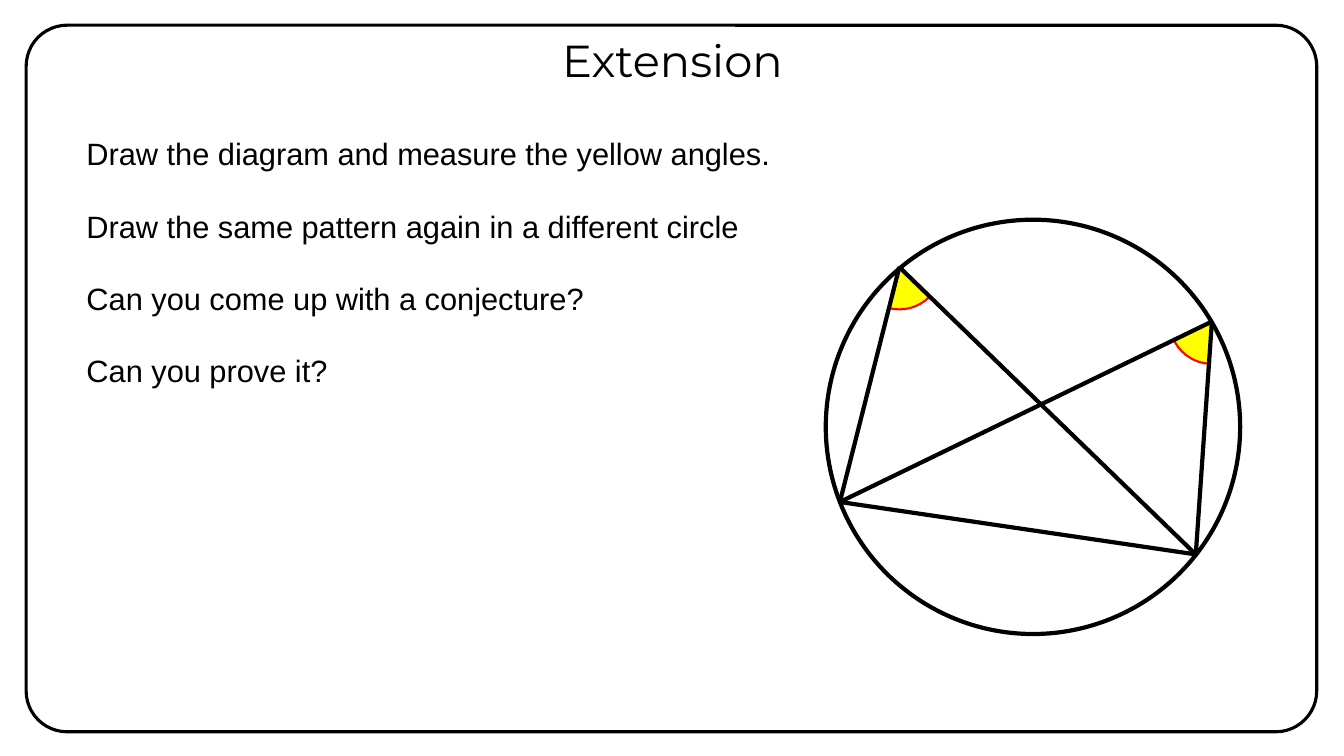
import math

import pptx
import pptx.dml.color
import pptx.enum.shapes
import pptx.enum.text
import pptx.oxml.ns
import pptx.util
from pptx.util import Inches

COLOURS = {"ink": "000000", "paper": "FFFFFF", "angle": "FFFF00", "arc": "FF0000"}
SHAPES = pptx.enum.shapes.MSO_SHAPE

QUESTIONS = [
    "Draw the diagram and measure the yellow angles.",
    "Draw the same pattern again in a different circle",
    "Can you come up with a conjecture?",
    "Can you prove it?",
]

TOP_LEFT, TOP_RIGHT = (8.92, 2.65), (12.02, 3.19)
BOTTOM_LEFT, BOTTOM_RIGHT = (8.33, 4.98), (11.86, 5.5)
CHORDS = [
    (BOTTOM_LEFT, BOTTOM_RIGHT),
    (TOP_RIGHT, BOTTOM_RIGHT),
    (TOP_RIGHT, BOTTOM_LEFT),
    (TOP_LEFT, BOTTOM_LEFT),
    (TOP_LEFT, BOTTOM_RIGHT),
]
ANGLE_RADIUS = 0.42


def colour(name):
    return pptx.dml.color.RGBColor.from_string(COLOURS[name])


def direction(start, end):
    """Clockwise angle in degrees from the rightward axis."""
    return math.degrees(math.atan2(end[1] - start[1], end[0] - start[0])) % 360


class SlideBuilder:
    """Draws styled elements on one slide."""

    def __init__(self, slide):
        self.slide = slide

    def style_line(self, line, name, width):
        line.color.rgb = colour(name)
        line.width = pptx.util.Pt(width)

    def shape(self, kind, box, line, width, fill=None):
        shape = self.slide.shapes.add_shape(kind, *map(Inches, box))
        shape.shadow.inherit = False
        if fill:
            shape.fill.solid()
            shape.fill.fore_color.rgb = colour(fill)
        else:
            shape.fill.background()
        self.style_line(shape.line, line, width)
        return shape

    def angle(self, vertex, first, second):
        """Mark the angle at vertex, clockwise from first to second."""
        x, y = vertex
        size = 2 * ANGLE_RADIUS
        box = (x - ANGLE_RADIUS, y - ANGLE_RADIUS, size, size)
        pie = self.shape(SHAPES.PIE, box, "arc", 1.5, "angle")
        for index, end in enumerate((first, second)):
            # Pie angles are in 1/60000 degree; adjustments scale by 100000.
            pie.adjustments[index] = direction(vertex, end) * 0.6

    def chord(self, start, end):
        connector = self.slide.shapes.add_connector(
            pptx.enum.shapes.MSO_CONNECTOR.STRAIGHT, *map(Inches, start + end))
        self.style_line(connector.line, "ink", 3)
        properties = connector._element.spPr
        properties.append(properties.makeelement(pptx.oxml.ns.qn("a:effectLst"), {}))

    def text(self, box, lines, font, size, gap=0, alignment=None):
        frame = self.slide.shapes.add_textbox(*map(Inches, box)).text_frame
        frame.word_wrap = True
        font_format = {"name": font, "size": pptx.util.Pt(size)}
        for index, line in enumerate(lines):
            paragraph = frame.add_paragraph() if index else frame.paragraphs[0]
            paragraph.alignment = alignment
            if index:
                paragraph.space_before = pptx.util.Pt(gap)
            run = paragraph.add_run()
            run.text = line
            for attribute, value in font_format.items():
                setattr(run.font, attribute, value)
            run.font.color.rgb = colour("ink")


def main():
    presentation = pptx.Presentation()
    presentation.slide_width = Inches(13.33)
    presentation.slide_height = Inches(7.5)
    builder = SlideBuilder(presentation.slides.add_slide(presentation.slide_layouts[6]))

    border = builder.shape(SHAPES.ROUNDED_RECTANGLE, (0.26, 0.25, 12.8, 7.01),
                           "ink", 2.25, "paper")
    border.adjustments[0] = 0.058
    builder.text((0.76, 1.29, 10.04, 2.69), QUESTIONS, "Arial", 22, gap=25.3)

    builder.angle(TOP_RIGHT, BOTTOM_RIGHT, BOTTOM_LEFT)
    builder.angle(TOP_LEFT, BOTTOM_RIGHT, BOTTOM_LEFT)
    builder.shape(SHAPES.OVAL, (8.19, 2.18, 4.11, 4.11), "ink", 3)
    for start, end in CHORDS:
        builder.chord(start, end)

    builder.text((4.76, 0.28, 3.82, 0.64), ["Extension"], "Montserrat", 32,
                 alignment=pptx.enum.text.PP_ALIGN.CENTER)
    presentation.save("out.pptx")


if __name__ == "__main__":
    main()
